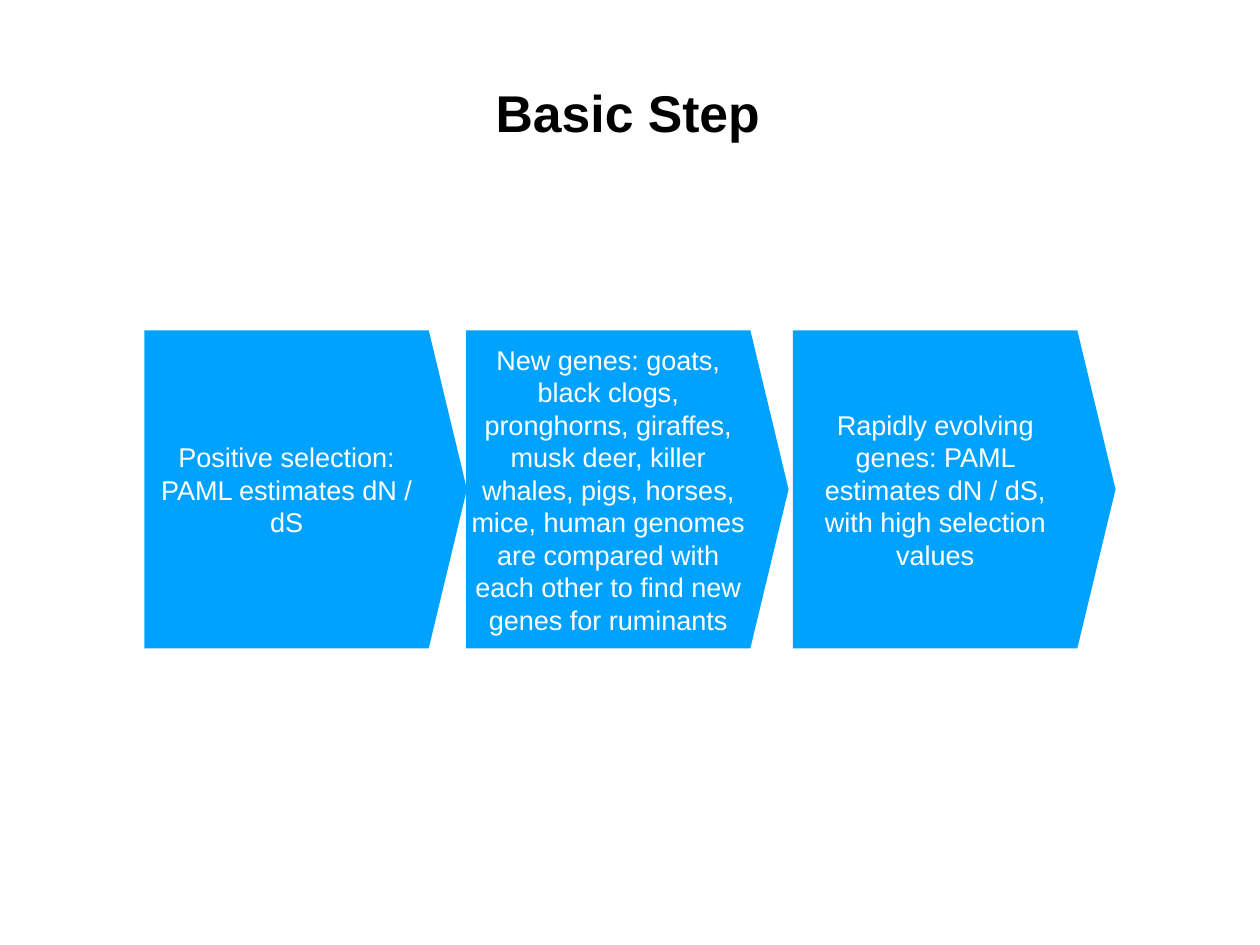
"""Build the "Basic Step" slide: a title above three arrow-shaped steps."""
from dataclasses import dataclass

from pptx import Presentation
from pptx.dml.color import RGBColor
from pptx.enum.shapes import MSO_SHAPE
from pptx.enum.text import MSO_ANCHOR, MSO_AUTO_SIZE, PP_ALIGN
from pptx.util import Inches, Pt

RIGHT_ARROW = MSO_SHAPE.RIGHT_ARROW
MIDDLE = MSO_ANCHOR.MIDDLE
CENTER = PP_ALIGN.CENTER
FIT_SHAPE = MSO_AUTO_SIZE.SHAPE_TO_FIT_TEXT

TITLE = "Basic Step"
STEPS = [
    (1.63, "Positive selection: PAML estimates dN / dS"),
    (5.26, "New genes: goats, black clogs, pronghorns, giraffes, musk deer, "
           "killer whales, pigs, horses, mice, human genomes are compared "
           "with each other to find new genes for ruminants"),
    (8.95, "Rapidly evolving genes: PAML estimates dN / dS, "
           "with high selection values"),
]

SLIDE_SIZE = (14.22, 10.67)
TITLE_BOX = (5.53, 0.86, 3.11, 0.8)
STEP_TOP, STEP_WIDTH, STEP_HEIGHT = 3.73, 3.64, 3.59
ARROW_SHAFT, ARROW_HEAD = 1, 0.12
TEXT_INSET = 0.06


@dataclass(frozen=True)
class Theme:
    font: str = "Arial"
    title_size: int = 42
    step_size: int = 22
    title_color: RGBColor = RGBColor(0x00, 0x00, 0x00)
    step_color: RGBColor = RGBColor(0xFF, 0xFF, 0xFF)
    step_fill: RGBColor = RGBColor(0x00, 0xA2, 0xFF)


THEME = Theme()


def write_text(shape, text, size, color, bold=False, wrap=True):
    frame = shape.text_frame
    frame.word_wrap = wrap
    frame.vertical_anchor = MIDDLE
    frame.margin_left = frame.margin_right = Inches(TEXT_INSET)
    frame.margin_top = frame.margin_bottom = Inches(TEXT_INSET)
    paragraph = frame.paragraphs[0]
    paragraph.alignment = CENTER
    run = paragraph.add_run()
    run.text = text
    run.font.name = THEME.font
    run.font.size = Pt(size)
    run.font.bold = bold
    run.font.color.rgb = color


def add_step(slide, left, text):
    box = (left, STEP_TOP, STEP_WIDTH, STEP_HEIGHT)
    arrow = slide.shapes.add_shape(RIGHT_ARROW, *map(Inches, box))
    arrow.adjustments[0] = ARROW_SHAFT
    arrow.adjustments[1] = ARROW_HEAD
    arrow.shadow.inherit = False
    arrow.fill.solid()
    arrow.fill.fore_color.rgb = THEME.step_fill
    arrow.line.fill.background()
    write_text(arrow, text, THEME.step_size, THEME.step_color)


def add_title(slide):
    title = slide.shapes.add_textbox(*map(Inches, TITLE_BOX))
    write_text(title, TITLE, THEME.title_size, THEME.title_color,
               bold=True, wrap=False)
    title.text_frame.auto_size = FIT_SHAPE


def main():
    presentation = Presentation()
    presentation.slide_width, presentation.slide_height = map(Inches, SLIDE_SIZE)
    slide = presentation.slides.add_slide(presentation.slide_layouts[6])
    for left, text in STEPS:
        add_step(slide, left, text)
    add_title(slide)
    presentation.save("out.pptx")


if __name__ == "__main__":
    main()
